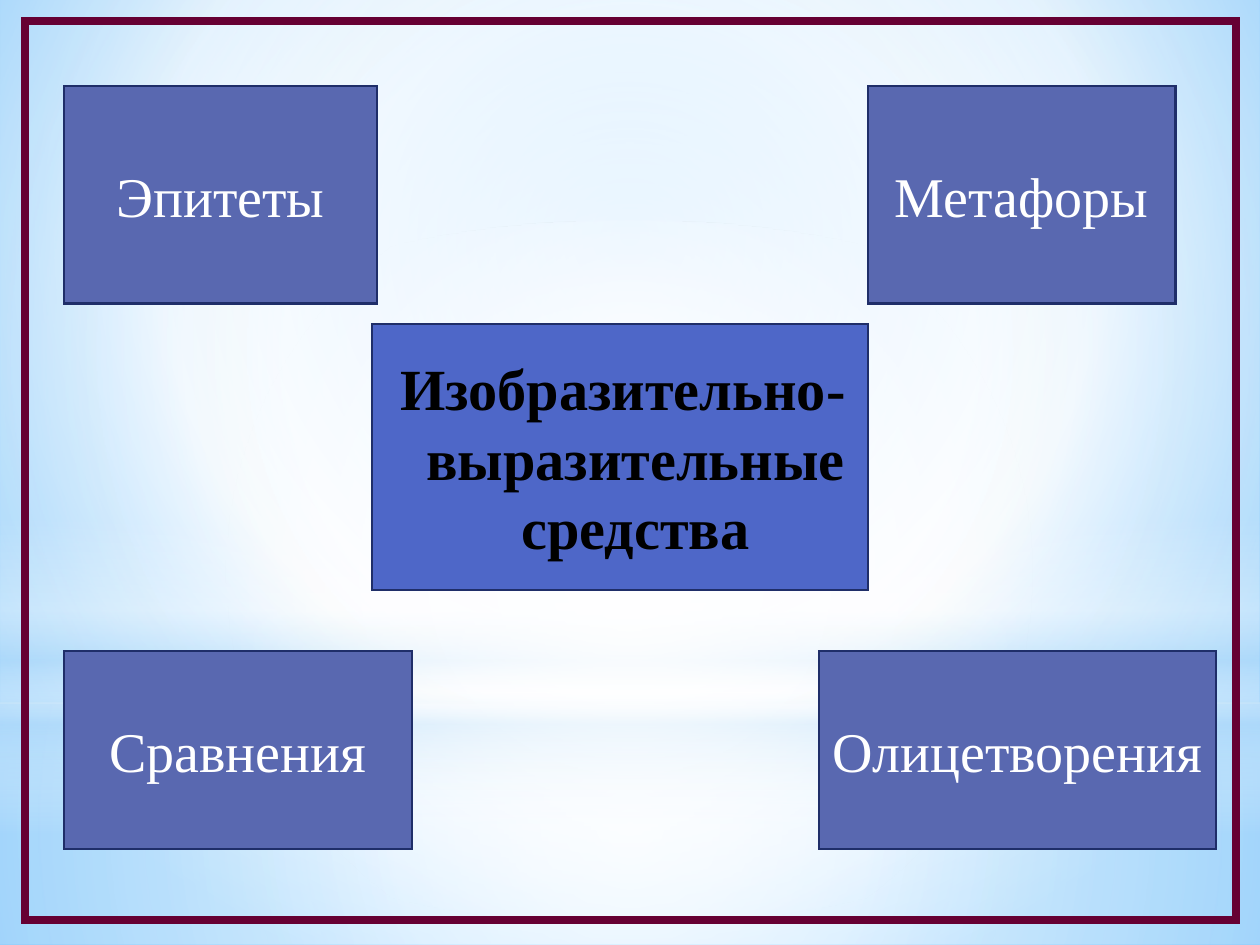
from typing import NamedTuple

from lxml import etree
from pptx import Presentation
from pptx.dml.color import RGBColor
from pptx.enum.shapes import MSO_SHAPE as Kind
from pptx.enum.text import MSO_ANCHOR as Anchor, MSO_AUTO_SIZE as Fit, PP_ALIGN as Align
from pptx.oxml.ns import qn
from pptx.util import Inches, Pt

FONT = "Times New Roman"
EDGE = "1F2E69"
MID = (50, 50, 50, 50)


class Stop(NamedTuple):
    pos: int
    color: str
    alpha: int = 100


class Glow(NamedTuple):
    kind: Kind
    top: float
    height: float
    stops: list[Stop]
    focus: tuple | None = MID


class Card(NamedTuple):
    text: str
    left: float
    top: float
    width: float
    height: float


SKY = [Stop(0, "9ED5FF"), Stop(60, "FFFFFF"), Stop(100, "5BB9FF")]
GLOWS = [
    Glow(Kind.RECTANGLE, 5.58, 1.92,
         [Stop(0, "FFFFFF", 91), Stop(37, "FFFFFF", 76), Stop(100, "B4DCFA", 79)]),
    Glow(Kind.RECTANGLE, 0, 5.58,
         [Stop(0, "FFFFFF", 89), Stop(48, "FFFFFF", 62), Stop(100, "B4DCFA", 79)]),
    Glow(Kind.RECTANGLE, 4.12, 2.5,
         [Stop(0, "FFFFFF", 0), Stop(29, "FFFFFF", 30), Stop(45, "B4DCFA", 40),
          Stop(55, "FFFFFF", 26), Stop(65, "B4DCFA", 60), Stop(100, "FFFFFF", 0)], None),
    Glow(Kind.OVAL, 1.75, 5.58, [Stop(0, "FFFFFF"), Stop(56, "FFFFFF", 0)]),
]
CARDS = [
    Card("Эпитеты", 0.51, 0.68, 2.48, 1.73),
    Card("Сравнения", 0.51, 5.17, 2.76, 1.57),
    Card("Олицетворения", 6.5, 5.17, 3.15, 1.57),
    Card("Метафоры", 6.89, 0.68, 2.44, 1.73),
]


def rgb(color: str) -> RGBColor:
    return RGBColor.from_string(color)


def blend(holder, stops: list[Stop], focus: tuple | None) -> None:
    """Swap a solid fill for a gradient: round about focus, or downward."""
    grad = etree.Element(qn("a:gradFill"), rotWithShape="1")
    items = etree.SubElement(grad, qn("a:gsLst"))
    for stop in stops:
        item = etree.SubElement(items, qn("a:gs"), pos=str(stop.pos * 1000))
        color = etree.SubElement(item, qn("a:srgbClr"), val=stop.color)
        if stop.alpha < 100:
            etree.SubElement(color, qn("a:alpha"), val=str(stop.alpha * 1000))
    if focus:
        path = etree.SubElement(grad, qn("a:path"), path="circle")
        sides = {side: str(value * 1000) for side, value in zip("ltrb", focus)}
        etree.SubElement(path, qn("a:fillToRect"), **sides)
    else:
        etree.SubElement(grad, qn("a:lin"), ang="5400000", scaled="0")
    holder.replace(holder.find(qn("a:solidFill")), grad)


def add_box(slide, kind: Kind, left: float, top: float, width: float, height: float):
    box = slide.shapes.add_shape(kind, *map(Inches, (left, top, width, height)))
    box.shadow.inherit = False
    return box


def outline(box, color: str, weight: float) -> None:
    """Draw a line with sharp corners."""
    box.line.color.rgb = rgb(color)
    box.line.width = Pt(weight)
    line = box._element.spPr.find(qn("a:ln"))
    etree.SubElement(line, qn("a:miter"), lim="800000")


def paint(box, fill: str) -> None:
    box.fill.solid()
    box.fill.fore_color.rgb = rgb(fill)
    outline(box, EDGE, 1.25)


def write(box, text: str, *, size: float = 32, color: str = "FFFFFF", bold: bool = False):
    frame = box.text_frame
    frame.text = text
    frame.word_wrap = True
    frame.auto_size = Fit.NONE
    frame.vertical_anchor = Anchor.MIDDLE
    para = frame.paragraphs[0]
    para.alignment = Align.CENTER
    font = para.runs[0].font
    font.name, font.size, font.bold = FONT, Pt(size), bold
    font.color.rgb = rgb(color)
    return para


def add_glow(slide, glow: Glow) -> None:
    box = add_box(slide, glow.kind, 0, glow.top, 10, glow.height)
    box.fill.solid()
    box.line.fill.background()
    blend(box._element.spPr, glow.stops, glow.focus)


def add_card(slide, card: Card) -> None:
    box = add_box(slide, Kind.RECTANGLE, *card[1:])
    paint(box, "5968B0")
    write(box, card.text)


def set_title(slide) -> None:
    title = slide.shapes.title
    title.left, title.top, title.width, title.height = map(Inches, (2.95, 2.57, 3.94, 2.11))
    paint(title, "4E67C8")
    para = write(title, "Изобразительно-выразительные средства",
                 size=33.3, color="000000", bold=True)
    props = para._p.get_or_add_pPr()
    props.set("marL", str(Inches(0.25)))
    props.set("indent", str(Inches(-0.2)))
    slide.shapes._spTree.append(title._element)  # bring to front


def main() -> None:
    deck = Presentation()
    deck.slide_width, deck.slide_height = Inches(10), Inches(7.5)
    slide = deck.slides.add_slide(deck.slide_layouts[5])
    slide.background.fill.solid()
    blend(slide._element.find(".//" + qn("p:bgPr")), SKY, (20, 10, 20, 60))
    for glow in GLOWS:
        add_glow(slide, glow)
    frame = add_box(slide, Kind.RECTANGLE, 0.2, 0.17, 9.61, 7.13)
    frame.fill.background()
    outline(frame, "660033", 4.5)
    set_title(slide)
    for card in CARDS:
        add_card(slide, card)
    deck.save("out.pptx")


if __name__ == "__main__":
    main()
